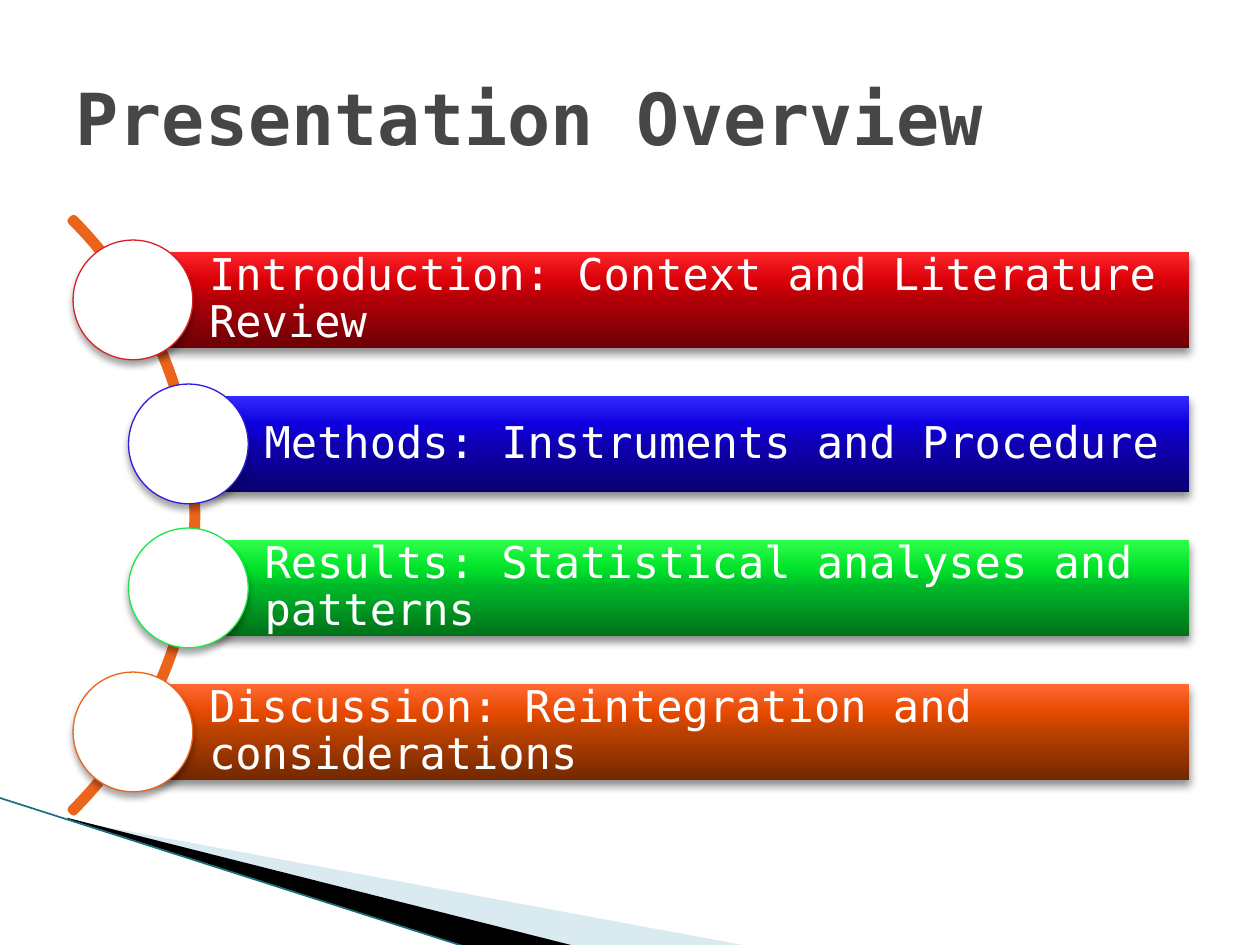
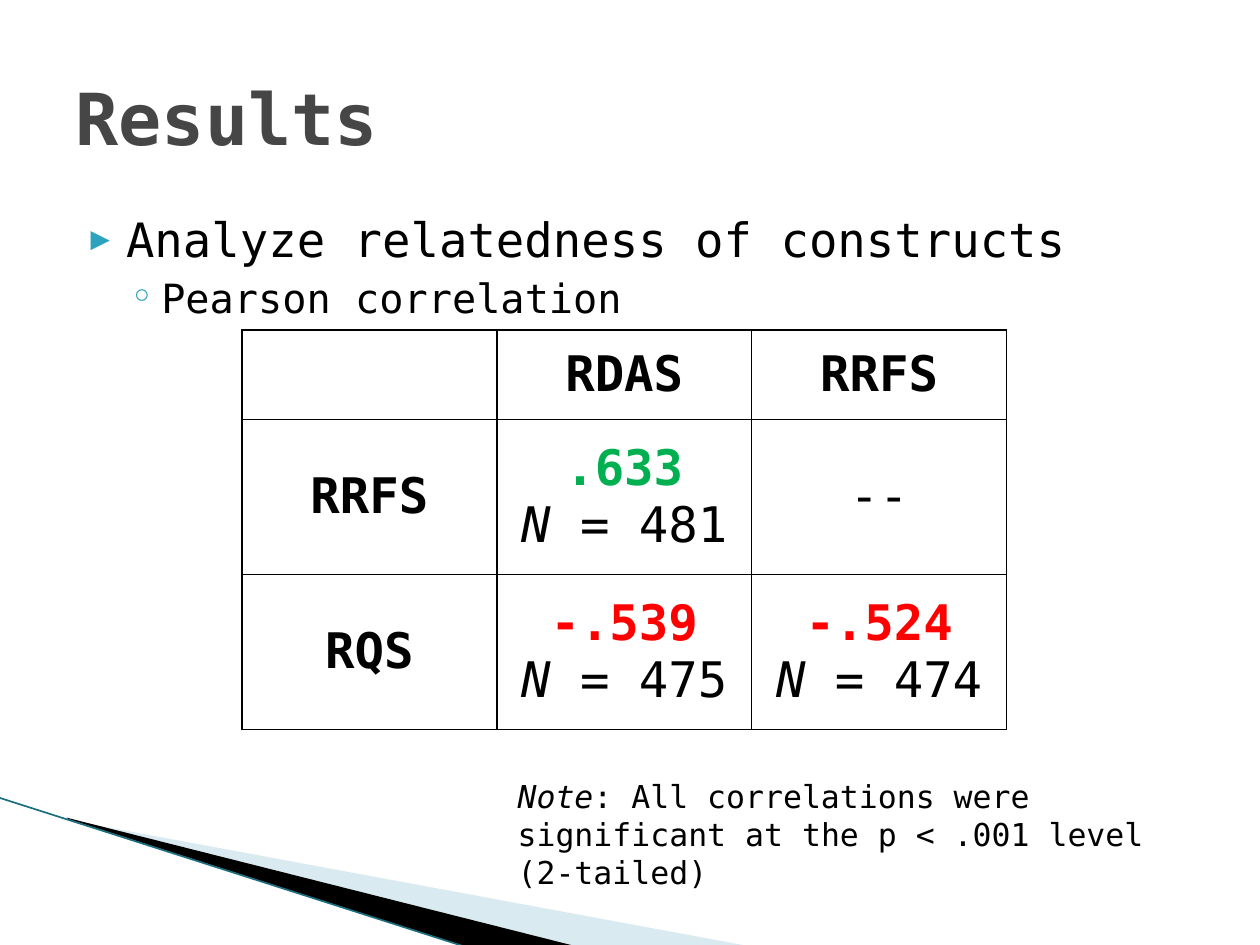
import pptx
import pptx.util
import pptx.dml.color
import pptx.enum.shapes
import pptx.enum.text
import pptx.oxml
import copy
import lxml.etree

RGBColor = pptx.dml.color.RGBColor
Pt = pptx.util.Pt
MID = pptx.enum.text.MSO_ANCHOR.MIDDLE
LEFT = pptx.enum.text.PP_ALIGN.LEFT
CENTER = pptx.enum.text.PP_ALIGN.CENTER
KIND = pptx.enum.shapes.MSO_SHAPE
NS = 'xmlns:a="http://schemas.openxmlformats.org/drawingml/2006/main"'

FONT = "DejaVu Sans Mono"
BLACK = RGBColor(0x00, 0x00, 0x00)
WHITE = RGBColor(0xFF, 0xFF, 0xFF)
GRAY = RGBColor(0x46, 0x46, 0x46)
PALE = RGBColor(0xA0, 0xCB, 0xDC)
TEAL = RGBColor(0x1A, 0x6E, 0x7E)
AQUA = RGBColor(0x2D, 0xA2, 0xBF)
ORANGE = RGBColor(0xEB, 0x64, 0x1B)
GREEN = RGBColor(0x00, 0xB0, 0x50)
RED = RGBColor(0xFF, 0x00, 0x00)

deck = pptx.Presentation()
deck.slide_width = pptx.util.Inches(10)
deck.slide_height = pptx.util.Inches(7.5)
COL = deck.slide_width / 100
ROW = deck.slide_height / 75


def at(*grid):
    return [pptx.util.Emu(round(n * (ROW if i % 2 else COL))) for i, n in enumerate(grid)]


def put(par, text, size, color=BLACK, bold=False, italic=False):
    run = par.add_run()
    run.text = text
    run.font.name = FONT
    run.font.size = Pt(size)
    run.font.color.rgb = color
    run.font.bold = bold
    run.font.italic = italic


plan = deck.slides.add_slide(deck.slide_layouts[5])
data = deck.slides.add_slide(deck.slide_layouts[1])

wings = [
    (PALE, 40, [(5.5, 65.1), (59.5, 75.1), (45.6, 75.1), (5.5, 65)]),
    (BLACK, 100, [(5.3, 64.9), (45.7, 75.1), (37.2, 75.2), (5.4, 65)]),
]
for slide, head in ((plan, "Presentation Overview"), (data, "Results")):
    for color, alpha, dots in wings:
        pen = slide.shapes.build_freeform(*at(*dots[0]), scale=1.0)
        pen.add_line_segments([at(*dot) for dot in dots[1:]], close=True)
        wing = pen.convert_to_shape()
        wing.shadow.inherit = False
        wing.fill.solid()
        wing.fill.fore_color.rgb = color
        wing.line.fill.background()
        tint = wing.fill._xPr.find(".//" + pptx.oxml.ns.qn("a:srgbClr"))
        tint.append(pptx.oxml.parse_xml(f'<a:alpha {NS} val="{alpha * 1000}"/>'))
    edge = slide.shapes.add_connector(
        pptx.enum.shapes.MSO_CONNECTOR.STRAIGHT, *at(-0.1, 63.3, 37.1, 75.2))
    edge.line.color.rgb = TEAL
    edge.line.width = Pt(0.95)
    edge._element.spPr.append(pptx.oxml.parse_xml(f"<a:effectLst {NS}/>"))

    title = slide.shapes.title
    title.left, title.top, title.width, title.height = at(5, 3, 90, 12.5)
    frame = title.text_frame
    frame.auto_size = pptx.enum.text.MSO_AUTO_SIZE.NONE
    frame.vertical_anchor = MID
    frame.paragraphs[0].alignment = LEFT
    put(frame.paragraphs[0], head, 41, GRAY, True)

arc = plan.shapes.add_shape(KIND.BLOCK_ARC, *at(-51, 7.6, 66.6, 66.6))
for i, turn in enumerate((189, 27, 0.004)):
    arc.adjustments[i] = turn
arc.shadow.inherit = False
arc.fill.background()
arc.line.color.rgb = ORANGE
arc.line.width = Pt(4.33)

steps = [
    ("Introduction: Context and Literature Review", 10.6, RGBColor(0xDA, 0x1F, 0x28),
     ("6D0005", "B00008", "DA0008", "FF2429")),
    ("Methods: Instruments and Procedure", 15, RGBColor(0x2D, 0x1C, 0xE1),
     ("09006F", "0F00B3", "0E00DE", "332AFF")),
    ("Results: Statistical analyses and patterns", 15, RGBColor(0x1B, 0xE7, 0x47),
     ("007119", "00B628", "00E22A", "2FFF4B")),
    ("Discussion: Reintegration and considerations", 10.6, ORANGE,
     ("732800", "B94100", "E64900", "FF6933")),
]
for i, (text, x, rim, shades) in enumerate(steps):
    y = 20 + 11.43 * i
    bar = plan.shapes.add_shape(KIND.RECTANGLE, *at(x, y, 94.35 - x, 7.6))
    bar.fill.gradient()
    bar.fill.gradient_angle = 90
    stops = bar.fill._xPr.find(".//" + pptx.oxml.ns.qn("a:gsLst"))
    stops.clear()
    for share, shade in zip((0, 50, 70, 100), shades):
        stops.append(pptx.oxml.parse_xml(
            f'<a:gs {NS} pos="{share * 1000}"><a:srgbClr val="{shade}"/></a:gs>'))
    bar.line.fill.background()
    frame = bar.text_frame
    frame.word_wrap = True
    frame.vertical_anchor = MID
    frame.margin_left, frame.margin_top, frame.margin_right, frame.margin_bottom = at(6, 0.7, 0.7, 0.7)
    par = frame.paragraphs[0]
    par.alignment = LEFT
    par.line_spacing = 0.9
    put(par, text, 25, WHITE)

    disc = plan.shapes.add_shape(KIND.OVAL, *at(x - 4.8, y - 0.95, 9.5, 9.5))
    disc.fill.solid()
    disc.fill.fore_color.rgb = WHITE
    disc.line.color.rgb = rim
    disc.line.width = Pt(0.75)
    for shape, alpha, blur in ((bar, 45, 5), (disc, 35, 4)):
        shape.shadow.inherit = False
        glow = shape._element.spPr.find(pptx.oxml.ns.qn("a:effectLst"))
        glow.append(pptx.oxml.parse_xml(
            f'<a:outerShdw {NS} blurRad="{Pt(blur)}" dist="{Pt(3)}" dir="5400000" '
            f'rotWithShape="0"><a:srgbClr val="{BLACK}"><a:alpha val="{alpha * 1000}"/>'
            '</a:srgbClr></a:outerShdw>'))

body = data.placeholders[1]
body.left, body.top, body.width, body.height = at(5, 16.2, 90, 49.5)
frame = body.text_frame
frame.auto_size = pptx.enum.text.MSO_AUTO_SIZE.NONE
points = [
    ("Analyze relatedness of constructs", 27, 4, -2.8, 0, "▶", 68),
    ("Pearson correlation", 23, 6.8, -2.5, 3.2, "◦", 100),
]
for level, (text, size, left, hang, gap, mark, scale) in enumerate(points):
    par = frame.add_paragraph() if level else frame.paragraphs[0]
    par.level = level
    par.space_before = Pt(gap)
    prop = par._p.get_or_add_pPr()
    prop.set("marL", str(round(left * COL)))
    prop.set("indent", str(round(hang * COL)))
    for tag in (f'<a:buClr {NS}><a:srgbClr val="{AQUA}"/></a:buClr>',
                f'<a:buSzPct {NS} val="{scale * 1000}"/>',
                f'<a:buFont {NS} typeface="{FONT}"/>',
                f'<a:buChar {NS} char="{mark}"/>'):
        prop.append(pptx.oxml.parse_xml(tag))
    put(par, text, size)

grid = [
    [None, ("RDAS", BLACK, None), ("RRFS", BLACK, None)],
    [("RRFS", BLACK, None), (".633", GREEN, 481), ("--", BLACK, None)],
    [("RQS", BLACK, None), ("-.539", RED, 475), ("-.524", RED, 474)],
]
table = data.shapes.add_table(3, 3, *at(19.2, 26.2, 60.7, 31.7)).table
table.first_row = False
table.horz_banding = False
for col in table.columns:
    col.width = round(20.23 * COL)
for row, tall in zip(table.rows, (7.1, 12.3, 12.3)):
    row.height = round(tall * ROW)
for r, line in enumerate(grid):
    for c, item in enumerate(line):
        cell = table.cell(r, c)
        cell.vertical_anchor = MID
        prop = cell._tc.get_or_add_tcPr()
        for side in "LRTB":
            prop.append(pptx.oxml.parse_xml(
                f'<a:ln{side} {NS} w="{Pt(1)}"><a:solidFill><a:srgbClr val="{BLACK}"/>'
                f'</a:solidFill></a:ln{side}>'))
        cell.fill.background()
        if item is None:
            continue
        text, color, count = item
        par = cell.text_frame.paragraphs[0]
        par.alignment = CENTER
        put(par, text, 28, color, text != "--")
        if count:
            par = cell.text_frame.add_paragraph()
            par.alignment = CENTER
            put(par, "N", 28, italic=True)
            put(par, f" = {count}", 28)

note = data.shapes.add_textbox(*at(40.1, 61.2, 52.7, 7.1))
note.text_frame.word_wrap = True
par = note.text_frame.paragraphs[0]
put(par, "Note", 18, italic=True)
put(par, ": All correlations were significant at the p < .001 level (2-tailed)", 18)

deck.save("out.pptx")
